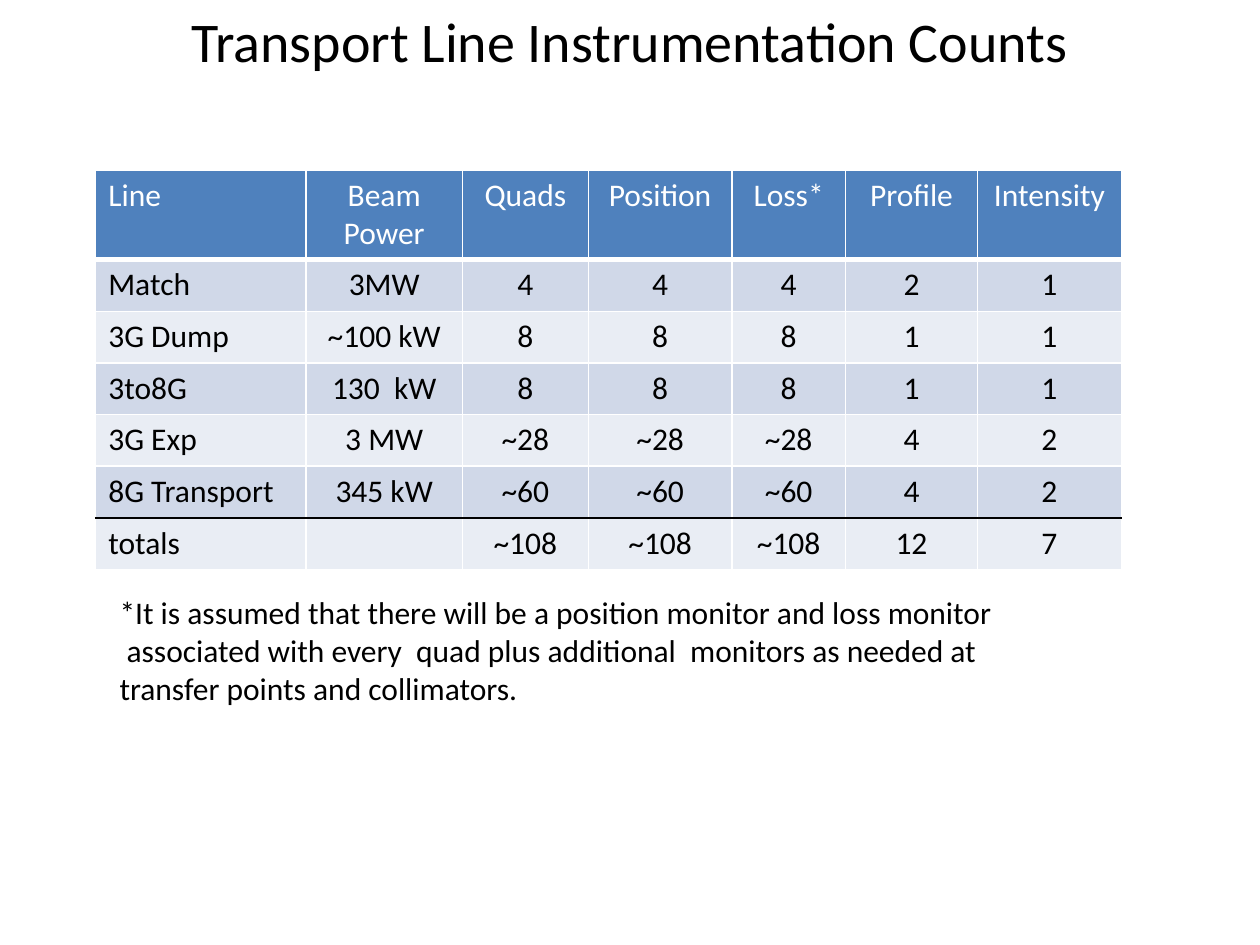
from dataclasses import dataclass

from lxml import etree
from pptx import Presentation, util as u
from pptx.dml.color import RGBColor
from pptx.enum import text as t
from pptx.oxml.ns import qn

WIDE, HIGH = 10, 7.5
FONT = "Calibri"
HUES = {
    "ink": "000000",
    "paper": "FFFFFF",
    "head": "4F81BD",
    "odd": "D0D8E8",
    "even": "E9EDF4",
}
ROW = 0.41


@dataclass
class Col:
    head: str
    width: float
    align: t.PP_ALIGN = t.PP_ALIGN.CENTER


COLS = [
    Col("Line", 1.67, t.PP_ALIGN.LEFT),
    Col("Beam\nPower", 1.24),
    Col("Quads", 1),
    Col("Position", 1.14),
    Col("Loss*", 0.9),
    Col("Profile", 1.05),
    Col("Intensity", 1.14),
]
LINES = [
    ("Match", "3MW", "4", "4", "4", "2", "1"),
    ("3G Dump", "~100 kW", "8", "8", "8", "1", "1"),
    ("3to8G", "130  kW", "8", "8", "8", "1", "1"),
    ("3G Exp", "3 MW", "~28", "~28", "~28", "4", "2"),
    ("8G Transport", "345 kW", "~60", "~60", "~60", "4", "2"),
    ("totals", "", "~108", "~108", "~108", "12", "7"),
]
NOTE = (
    "*It is assumed that there will be a position monitor and loss monitor\n"
    " associated with every  quad plus additional  monitors as needed at\n"
    "transfer points and collimators."
)


def hue(name: str) -> RGBColor:
    return RGBColor.from_string(HUES[name])


def write(frame, words: str, size: float, tint: str, align: t.PP_ALIGN) -> None:
    """Fill a text frame, one paragraph per line of words."""
    for i, line in enumerate(words.split("\n")):
        para = frame.paragraphs[0] if i == 0 else frame.add_paragraph()
        para.alignment = align
        para.font.size = u.Pt(size)
        if line:
            run = para.add_run()
            run.text = line
            run.font.name = FONT
            run.font.size = u.Pt(size)
            run.font.color.rgb = hue(tint)


def edge(cell, side: str, tint: str, width: float) -> None:
    """Add one cell border; sides go in the order L, R, T, B."""
    props = cell._tc.get_or_add_tcPr()
    line = etree.SubElement(props, qn(f"a:ln{side}"), w=str(u.Pt(width)))
    fill = etree.SubElement(line, qn("a:solidFill"))
    etree.SubElement(fill, qn("a:srgbClr"), val=HUES[tint])


def add_grid(slide, left: float, top: float) -> None:
    rows = [tuple(col.head for col in COLS)] + LINES
    last = len(rows) - 1
    wide = sum(col.width for col in COLS)
    table = slide.shapes.add_table(
        len(rows), len(COLS), u.Inches(left), u.Inches(top),
        u.Inches(wide), u.Inches(ROW * len(rows)),
    ).table
    for c, col in enumerate(COLS):
        table.columns[c].width = u.Inches(col.width)
    for r, row in enumerate(rows):
        band = "head" if r == 0 else "odd" if r % 2 else "even"
        above = "ink" if r == last else "paper"
        below = "ink" if r == last - 1 else "paper"
        for c, words in enumerate(row):
            cell = table.cell(r, c)
            edge(cell, "L", "paper", 1)
            edge(cell, "R", "paper", 1)
            edge(cell, "T", above, 3 if r == 1 else 1)
            edge(cell, "B", below, 3 if r == 0 else 1)
            cell.fill.solid()
            cell.fill.fore_color.rgb = hue(band)
            tint = "paper" if r == 0 else "ink"
            write(cell.text_frame, words, 18, tint, COLS[c].align)


def main() -> None:
    deck = Presentation()
    deck.slide_width, deck.slide_height = u.Inches(WIDE), u.Inches(HIGH)
    slide = deck.slides.add_slide(deck.slide_layouts[5])

    # Title
    title = slide.shapes.title
    title.left, title.top = u.Inches(0.05 * WIDE), 0
    title.width, title.height = u.Inches(0.9 * WIDE), u.Inches(0.92)
    title.text_frame.vertical_anchor = t.MSO_ANCHOR.TOP
    title.text_frame.auto_size = t.MSO_AUTO_SIZE.NONE
    write(title.text_frame, "Transport Line Instrumentation Counts",
          32, "ink", t.PP_ALIGN.CENTER)

    # Instrument counts
    add_grid(slide, 0.76, 0.18 * HIGH)

    # Footnote
    note = slide.shapes.add_textbox(
        u.Inches(0.85), u.Inches(4.66), u.Inches(7.21), u.Inches(1.01))
    note.text_frame.word_wrap = False
    note.text_frame.auto_size = t.MSO_AUTO_SIZE.SHAPE_TO_FIT_TEXT
    write(note.text_frame, NOTE, 18, "ink", t.PP_ALIGN.LEFT)

    deck.save("out.pptx")


if __name__ == "__main__":
    main()
